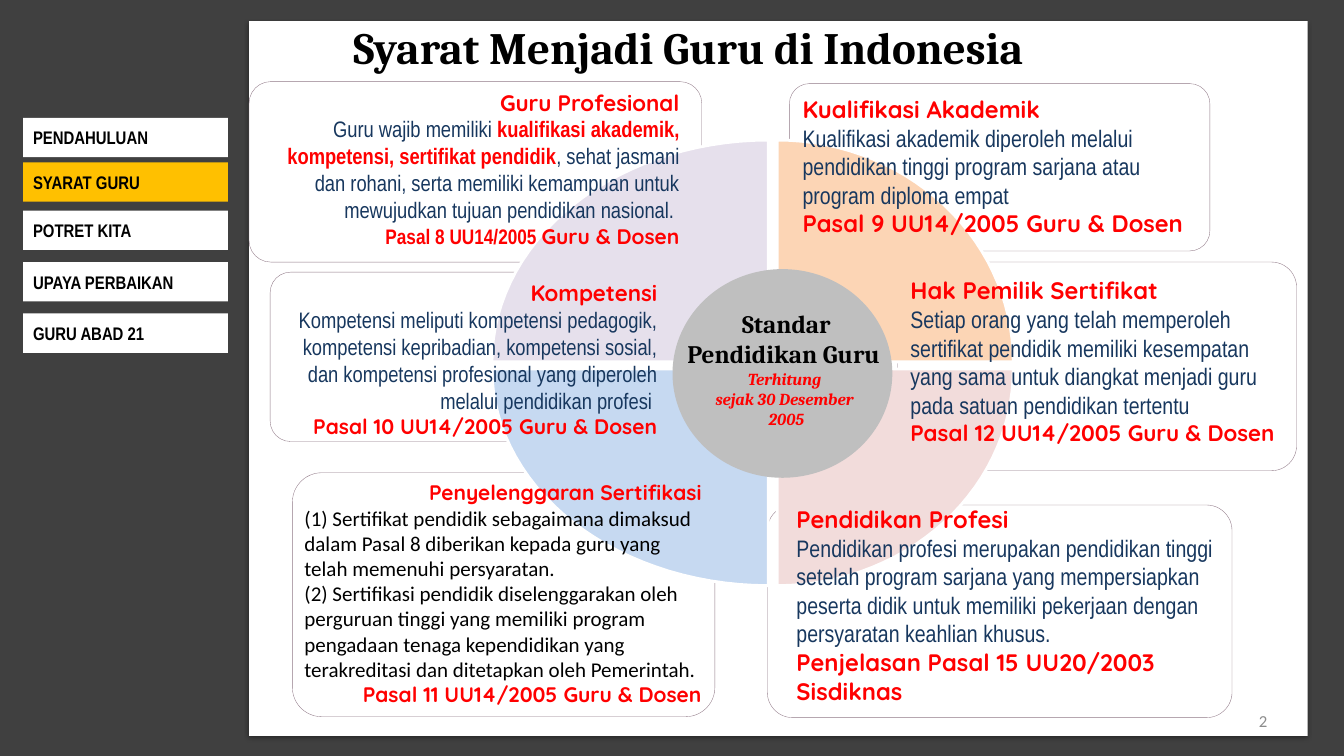
import math

import lxml.etree
import pptx
import pptx.dml.color
import pptx.enum.shapes
import pptx.enum.text
import pptx.oxml
import pptx.oxml.ns
import pptx.util

COLUMNS, ROWS = 133.3, 75
LEFT = pptx.enum.text.PP_ALIGN.LEFT
CENTER = pptx.enum.text.PP_ALIGN.CENTER
RIGHT = pptx.enum.text.PP_ALIGN.RIGHT
TOP, MIDDLE = pptx.enum.text.MSO_ANCHOR.TOP, pptx.enum.text.MSO_ANCHOR.MIDDLE
SHAPES = pptx.enum.shapes.MSO_SHAPE
STYLES = {
    "title": ("Cambria", "000000", True, False),
    "date": ("Cambria", "FF0000", True, True),
    "heading": ("Quicksand", "FF0000", True, False),
    "body": ("Arial Narrow", "17375E", False, False),
    "strong": ("Arial Narrow", "FF0000", True, False),
    "menu": ("Arial Narrow", "000000", True, False),
    "clause": ("Calibri", "000000", False, False),
    "number": ("Calibri", "8C8C8C", False, False),
}
MENU = [
    ("PENDAHULUAN", 11.7, "FFFFFF"),
    ("SYARAT GURU", 16.1, "FFC000"),
    ("POTRET KITA", 20.9, "FFFFFF"),
    ("UPAYA PERBAIKAN", 26, "FFFFFF"),
    ("GURU ABAD 21", 31.1, "FFFFFF"),
]
QUADRANTS = [
    (77.1, 35.9, 23.4, -22, "FCD5B5"),
    (76.2, 35.9, -27.4, -22, "E6E0EC"),
    (77.1, 36.6, 23.4, 21.5, "F2DCDB"),
    (76.2, 36.6, -27.4, 21.5, "C6D9F1"),
]
PANELS = [
    ((29, 46.9, 41.9, 24.2), (28.9, 46.9, 42, 23.9), TOP, [
        (RIGHT, 15, [("Penyelenggaran Sertifikasi", "heading")]),
        (LEFT, 15, [("(1) Sertifikat pendidik sebagaimana dimaksud dalam Pasal 8 diberikan kepada guru yang "
                     "telah memenuhi persyaratan.", "clause")]),
        (LEFT, 15, [("(2) Sertifikasi pendidik diselenggarakan oleh perguruan tinggi yang memiliki program "
                     "pengadaan tenaga kependidikan yang terakreditasi dan ditetapkan oleh Pemerintah.", "clause")]),
        (RIGHT, 15, [("Pasal 11 UU14/2005 Guru & Dosen", "heading")])]),
    ((76.1, 50.1, 46.1, 21.1), (77.7, 50.1, 46.7, 19.8), MIDDLE, [
        (LEFT, 17, [("Pendidikan Profesi", "heading")]),
        (LEFT, 17, [("Pendidikan profesi merupakan pendidikan tinggi setelah program sarjana yang mempersiapkan "
                     "peserta didik untuk memiliki pekerjaan dengan persyaratan keahlian khusus.", "body")]),
        (LEFT, 17, [("Penjelasan Pasal 15 UU20/2003 Sisdiknas", "heading")])]),
    ((78.3, 8.3, 41.7, 16.6), (78.3, 8.3, 43.9, 16.4), MIDDLE, [
        (LEFT, 17, [("Kualifikasi Akademik", "heading")]),
        (LEFT, 17, [("Kualifikasi akademik diperoleh melalui pendidikan tinggi program sarjana atau "
                     "program diploma empat", "body")]),
        (LEFT, 17, [("Pasal 9 UU14/2005 Guru & Dosen", "heading")])]),
    ((24.7, 8.1, 44.9, 17.9), (24.7, 8.1, 44, 17.5), TOP, [
        (RIGHT, 16, [("Guru Profesional", "heading")]),
        (RIGHT, 16, [("Guru wajib memiliki ", "body"),
                     ("kualifikasi akademik, kompetensi, sertifikat pendidik", "strong"),
                     (", sehat jasmani dan rohani, serta memiliki kemampuan untuk mewujudkan tujuan "
                      "pendidikan nasional. ", "body")]),
        (RIGHT, 15, [("Pasal 8 UU14/2005 ", "strong"), ("Guru & Dosen", "heading")])]),
    ((26.8, 27, 40.4, 16.8), (26.8, 27, 39.7, 17.5), TOP, [
        (RIGHT, 16, [("Kompetensi", "heading")]),
        (RIGHT, 16, [("Kompetensi meliputi kompetensi pedagogik, kompetensi kepribadian, kompetensi sosial, "
                      "dan kompetensi profesional yang diperoleh melalui pendidikan profesi ", "body")]),
        (RIGHT, 15, [("Pasal 10 UU14/2005 Guru & Dosen", "heading")])]),
    ((89, 26, 39.6, 20.7), (89, 26.7, 39.6, 18.6), TOP, [
        (LEFT, 17, [("Hak Pemilik Sertifikat", "heading")]),
        (LEFT, 17, [("Setiap orang yang telah memperoleh sertifikat pendidik memiliki kesempatan yang sama "
                     "untuk diangkat menjadi guru pada satuan pendidikan tertentu", "body")]),
        (LEFT, 16, [("Pasal 12 UU14/2005 Guru & Dosen", "heading")])]),
]


def color(value):
    return pptx.dml.color.RGBColor.from_string(value)


class Canvas:
    def __init__(self, presentation, background):
        self.column = presentation.slide_width / COLUMNS
        self.row = presentation.slide_height / ROWS
        self.slide = presentation.slides.add_slide(presentation.slide_layouts[5])
        self.slide.background.fill.solid()
        self.slide.background.fill.fore_color.rgb = color(background)

    def place(self, left, top, width, height):
        return [round(length * unit) for length, unit in
                zip((left, top, width, height), (self.column, self.row) * 2)]

    def paint(self, shape, fill, line=None, weight=1):
        shape.shadow.inherit = False
        shape.fill.solid()
        shape.fill.fore_color.rgb = color(fill)
        if line:
            shape.line.color.rgb = color(line)
            shape.line.width = pptx.util.Pt(weight)
        else:
            shape.line.fill.background()
        return shape

    def shape(self, kind, box, *paint):
        return self.paint(self.slide.shapes.add_shape(kind, *self.place(*box)), *paint)

    def page(self, box):
        effects = self.shape(SHAPES.RECTANGLE, box, "FFFFFF")._element.spPr.find(pptx.oxml.ns.qn("a:effectLst"))
        effects.append(pptx.oxml.parse_xml(
            f'<a:outerShdw {pptx.oxml.ns.nsdecls("a")} blurRad="39370" dist="20320" dir="5400000">'
            '<a:srgbClr val="000000"><a:alpha val="38000"/></a:srgbClr></a:outerShdw>'))

    def panel(self, box):
        shape = self.shape(SHAPES.ROUNDED_RECTANGLE, box, "FFFFFF", "907986", 0.25)
        shape.adjustments[0] = 0.12
        fill = shape._element.spPr.find(pptx.oxml.ns.qn("a:solidFill"))
        lxml.etree.SubElement(fill[0], pptx.oxml.ns.qn("a:alpha"), val="90000")

    def quadrant(self, x, y, width, height, fill):
        angles = [math.radians(3 * step) for step in range(31)]
        arc = [((x + width * math.cos(angle)) * self.column, (y + height * math.sin(angle)) * self.row)
               for angle in angles]
        builder = self.slide.shapes.build_freeform(x * self.column, y * self.row)
        builder.add_line_segments(arc, close=True)
        self.paint(builder.convert_to_shape(), fill, "FFFFFF", 2)

    def style(self, font, name, size):
        font.name, value, font.bold, font.italic = STYLES[name]
        font.color.rgb = color(value)
        font.size = pptx.util.Pt(size)

    def compose(self, frame, paragraphs, anchor=MIDDLE, insets=(0.1, 0.05)):
        frame.word_wrap = True
        frame.auto_size = pptx.enum.text.MSO_AUTO_SIZE.NONE
        frame.vertical_anchor = anchor
        frame.margin_left = frame.margin_right = pptx.util.Inches(insets[0])
        frame.margin_top = frame.margin_bottom = pptx.util.Inches(insets[1])
        for index, (alignment, size, runs) in enumerate(paragraphs):
            paragraph = frame.add_paragraph() if index else frame.paragraphs[0]
            paragraph.alignment = alignment
            for text, name in runs:
                run = paragraph.add_run()
                run.text = text
                if len(runs) > 1:
                    self.style(run.font, name, size)
            if len(runs) == 1:
                self.style(paragraph.font, runs[0][1], size)

    def text(self, box, *content):
        self.compose(self.slide.shapes.add_textbox(*self.place(*box)).text_frame, *content)

    def button(self, label, top, fill):
        shape = self.shape(SHAPES.RECTANGLE, (2.3, top, 20.3, 3.9), fill)
        self.compose(shape.text_frame, [(LEFT, 13, [(label, "menu")])])

    def title(self, box, text):
        title = self.slide.shapes.title
        title.left, title.top, title.width, title.height = self.place(*box)
        self.slide.shapes._spTree.append(title._element)
        self.compose(title.text_frame, [(CENTER, 32, [(text, "title")])], TOP, (0.13, 0.07))


def main():
    presentation = pptx.Presentation()
    presentation.slide_width = pptx.util.Inches(13.33)
    presentation.slide_height = pptx.util.Inches(7.5)
    canvas = Canvas(presentation, "404040")
    canvas.page((24.7, 2.1, 105, 70.9))
    canvas.text((95.6, 69.5, 31.1, 4), [(RIGHT, 12, [("2", "number")])])
    for entry in MENU:
        canvas.button(*entry)
    for frame, *_ in PANELS:
        canvas.panel(frame)
    for quadrant in QUADRANTS:
        canvas.quadrant(*quadrant)
    canvas.shape(SHAPES.OVAL, (66.7, 26.7, 21.8, 20.7), "BFBFBF")
    dates = [(CENTER, 12, [(line, "date")]) for line in ("Terhitung ", "sejak 30 Desember ", "2005")]
    canvas.text((67, 34.3, 22, 4.6), [(CENTER, 18, [("Standar Pendidikan Guru ", "title")]), *dates],
                MIDDLE, (0, 0))
    for _, box, anchor, paragraphs in PANELS:
        canvas.text(box, paragraphs, anchor, (0.13, 0.07))
    canvas.title((3.3, 1.3, 130, 6.7), "Syarat Menjadi Guru di Indonesia")
    presentation.save("out.pptx")


if __name__ == "__main__":
    main()
